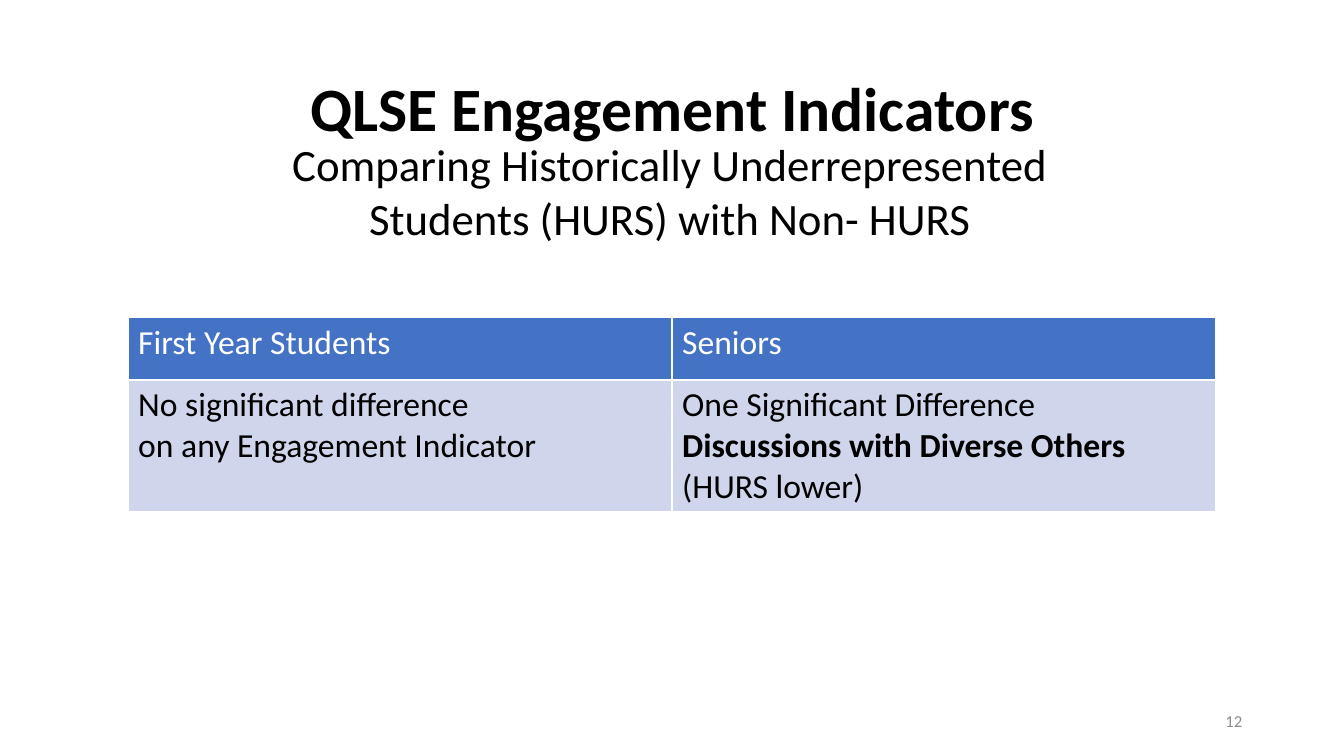
from lxml.etree import SubElement
from pptx import Presentation
from pptx.dml.color import RGBColor
from pptx.enum.text import MSO_ANCHOR as Anchor, PP_ALIGN as Align
from pptx.oxml.ns import qn
from pptx.util import Inches, Pt

WIDTH, HEIGHT = Inches(13.33), Inches(7.5)
FONT = "Calibri"
COLORS = {"ink": "000000", "paper": "FFFFFF", "muted": "8C8C8C",
          "header": "4472C4", "body": "CFD5EA"}

# Each cell holds paragraphs, each paragraph holds (text, bold) spans.
COLUMNS = [
    {"header": [[("First Year Students", False)]],
     "body": [[("No significant difference", False)],
              [("on any Engagement Indicator", False)]]},
    {"header": [[("Seniors", False)]],
     "body": [[("One Significant Difference", False)],
              [("Discussions with Diverse Others ", True), ("(HURS lower)", False)]]},
]
ROWS = {"header": (8.27, "paper"), "body": (17.33, "ink")}


def across(percent):
    return round(WIDTH * percent / 100)


def down(percent):
    return round(HEIGHT * percent / 100)


def place(left, top, width, height):
    """Turn percentages of the slide into a position and a size."""
    return across(left), down(top), across(width), down(height)


def apply(target, formats):
    for name, value in formats.items():
        setattr(target, name, value)


def write(frame, paragraphs, size, color, **para_formats):
    for index, spans in enumerate(paragraphs):
        para = frame.paragraphs[0] if index == 0 else frame.add_paragraph()
        apply(para, para_formats)
        for text, bold in spans:
            span = para.add_run()
            span.text = text
            apply(span.font, {"name": FONT, "size": Pt(size), "bold": bold})
            span.font.color.rgb = RGBColor.from_string(COLORS[color])


def add_text(page, area, text, size, color="ink", bold=False,
             anchor=Anchor.MIDDLE, **para_formats):
    frame = page.shapes.add_textbox(*place(*area)).text_frame
    apply(frame, {"word_wrap": True, "vertical_anchor": anchor})
    write(frame, [[(text, bold)]], size, color, **para_formats)


def outline(cell, color, points):
    properties = cell._tc.get_or_add_tcPr()
    for side in ("a:lnL", "a:lnR", "a:lnT", "a:lnB"):
        line = SubElement(properties, qn(side), w=str(Pt(points)))
        fill = SubElement(line, qn("a:solidFill"))
        SubElement(fill, qn("a:srgbClr"), val=COLORS[color])


def add_comparison(page, left, top, width):
    height = sum(share for share, _ in ROWS.values())
    area = place(left, top, width, height)
    table = page.shapes.add_table(len(ROWS), len(COLUMNS), *area).table
    for row, (kind, (share, color)) in enumerate(ROWS.items()):
        table.rows[row].height = down(share)
        for column, content in enumerate(COLUMNS):
            cell = table.cell(row, column)
            outline(cell, "paper", 1)
            cell.fill.solid()
            cell.fill.fore_color.rgb = RGBColor.from_string(COLORS[kind])
            write(cell.text_frame, content[kind], 24, color)


def main():
    deck = Presentation()
    apply(deck, {"slide_width": WIDTH, "slide_height": HEIGHT})
    page = deck.slides.add_slide(deck.slide_layouts[6])
    add_text(page, (6.9, 5.07, 86.27, 19.33), "QLSE Engagement Indicators", 44,
             bold=True, alignment=Align.CENTER, line_spacing=0.9)
    add_text(page, (70.67, 92.67, 22.5, 5.33), "12", 12, "muted",
             alignment=Align.RIGHT)
    add_text(page, (18.23, 17.47, 63.24, 15.73),
             "Comparing Historically Underrepresented Students (HURS) with Non- HURS",
             32, anchor=Anchor.TOP, alignment=Align.CENTER)
    add_comparison(page, 9.53, 42, 80.95)
    deck.save("out.pptx")


if __name__ == "__main__":
    main()
